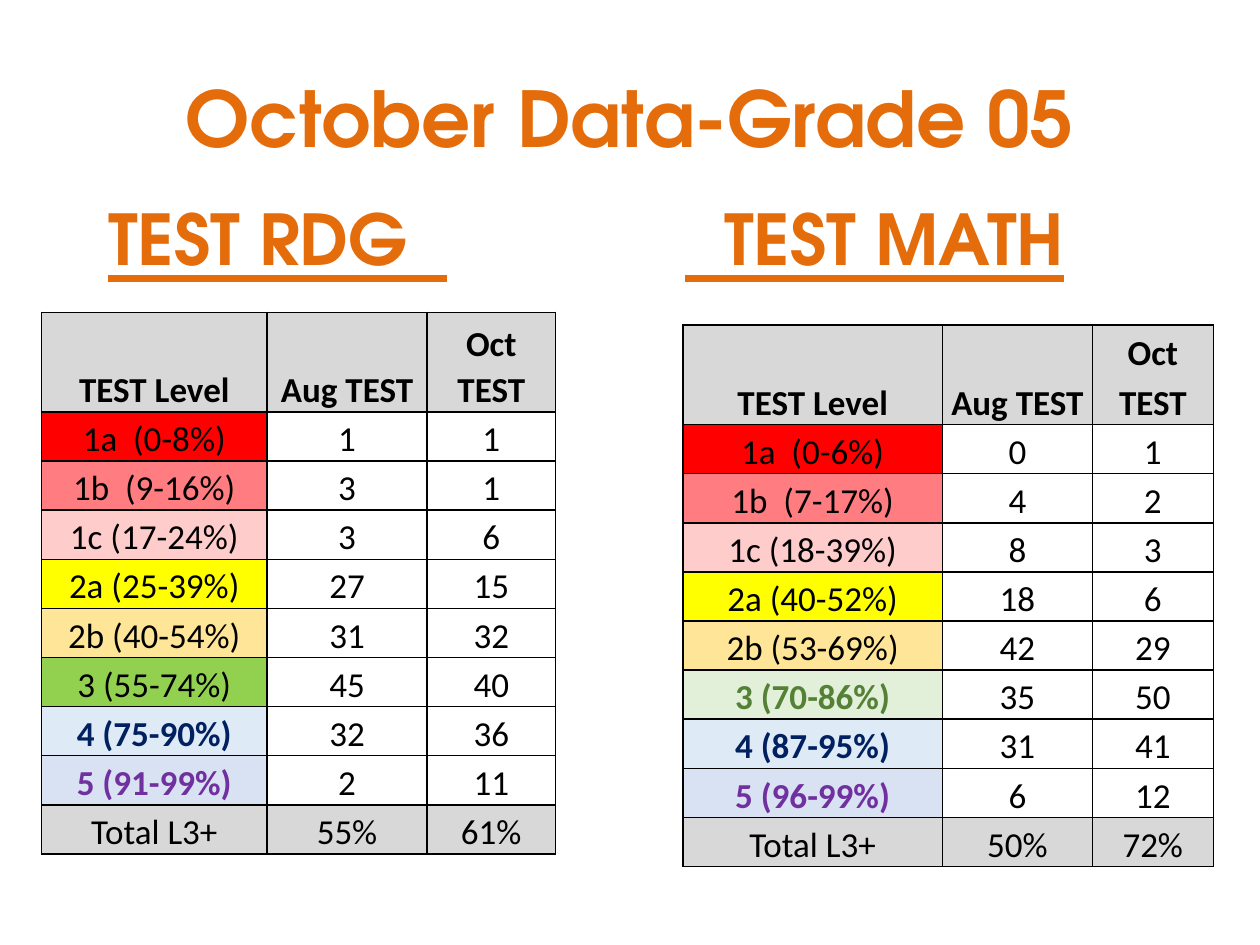
from lxml import etree
from pptx import Presentation
from pptx.dml.color import RGBColor
from pptx.enum import text as en
from pptx.oxml import ns
from pptx.util import Inches, Pt

HEAD = "TeX Gyre Adventor"
ORANGE, BLACK, GREY, WHITE = "E46C0A", "000000", "D8D8D8", "FFFFFF"
NAVY, PURPLE, GREEN = "002060", "7030A0", "548135"
FILLS = ["FF0000", "FF7C80", "FFCCCC", "FFFF00", "FFE598"]
TOPS = ["DEEAF6", "D9E2F3"]

LABELS = ("TEST Level", "Aug TEST", "Oct TEST")
READING = [
    LABELS,
    ("1a  (0-8%)", "1", "1"),
    ("1b  (9-16%)", "3", "1"),
    ("1c (17-24%)", "3", "6"),
    ("2a (25-39%)", "27", "15"),
    ("2b (40-54%)", "31", "32"),
    ("3 (55-74%)", "45", "40"),
    ("4 (75-90%)", "32", "36"),
    ("5 (91-99%)", "2", "11"),
    ("Total L3+", "55%", "61%"),
]
MATH = [
    LABELS,
    ("1a  (0-6%)", "0", "1"),
    ("1b  (7-17%)", "4", "2"),
    ("1c (18-39%)", "8", "3"),
    ("2a (40-52%)", "18", "6"),
    ("2b (53-69%)", "42", "29"),
    ("3 (70-86%)", "35", "50"),
    ("4 (87-95%)", "31", "41"),
    ("5 (96-99%)", "6", "12"),
    ("Total L3+", "50%", "72%"),
]


def color(code):
    return RGBColor.from_string(code)


def style(run, size, face, code, bold):
    font = run.font
    font.size, font.name, font.bold = Pt(size), face, bold
    font.color.rgb = color(code)


def frame(slide, box):
    area = slide.shapes.add_textbox(*map(Inches, box)).text_frame
    area.word_wrap = True
    return area


def title(slide, box):
    area = frame(slide, box)
    area.vertical_anchor = en.MSO_ANCHOR.MIDDLE
    area.text = "October Data-Grade 05"
    para = area.paragraphs[0]
    para.alignment = en.PP_ALIGN.CENTER
    style(para.runs[0], 44, HEAD, ORANGE, True)


def headings(slide, box):
    area = frame(slide, box)
    area.margin_left = Inches(0.31)
    para = area.paragraphs[0]
    tabs = etree.SubElement(para._p.get_or_add_pPr(), ns.qn("a:tabLst"))
    etree.SubElement(tabs, ns.qn("a:tab"), pos=str(Inches(4.58)), algn="l")
    for words, under in [("TEST RDG  ", True), ("\t", False), ("  TEST MATH", True)]:
        run = para.add_run()
        run.text = words
        style(run, 40, HEAD, ORANGE, True)
        run.font.underline = under


def border(cell):
    props = cell._tc.get_or_add_tcPr()
    for side in "LRTB":
        line = etree.SubElement(props, ns.qn("a:ln" + side), w=str(Pt(1)))
        fill = etree.SubElement(line, ns.qn("a:solidFill"))
        etree.SubElement(fill, ns.qn("a:srgbClr"), val=BLACK)


def fill_cell(cell, words, back, ink, bold, space):
    border(cell)
    cell.fill.solid()
    cell.fill.fore_color.rgb = color(back)
    cell.vertical_anchor = en.MSO_ANCHOR.BOTTOM
    cell.margin_left = cell.margin_right = Inches(0.07)
    cell.margin_top = cell.margin_bottom = 0
    cell.text = words
    para = cell.text_frame.paragraphs[0]
    para.alignment = en.PP_ALIGN.CENTER
    para.line_spacing = space
    style(para.runs[0], 20, "Calibri", ink, bold)


def scores(slide, box, rows, widths, space, third, inks):
    grid = slide.shapes.add_table(len(rows), len(widths), *map(Inches, box)).table
    for col, width in zip(grid.columns, widths):
        col.width = Inches(width)
    fills = [GREY, *FILLS, third, *TOPS, GREY]
    for r, row in enumerate(rows):
        grid.rows[r].height = Inches(0.39 if r else 0.79)
        ends = r in (0, len(rows) - 1)
        for c, words in enumerate(row):
            back = fills[r] if ends or c == 0 else WHITE
            ink = inks.get(r, BLACK) if c == 0 else BLACK
            bold = r == 0 or ink != BLACK
            fill_cell(grid.cell(r, c), words, back, ink, bold, space)


def main():
    deck = Presentation()
    deck.slide_width, deck.slide_height = Inches(10), Inches(7.5)
    slide = deck.slides.add_slide(deck.slide_layouts[6])
    title(slide, (0.5, 0.3, 9, 1.25))
    headings(slide, (0.55, 1.5, 9, 4.95))
    inks = {7: NAVY, 8: PURPLE}
    scores(slide, (0.33, 2.48, 4.08, 4.27), READING,
           (1.79, 1.27, 1.02), 1.07, "92D050", inks)
    scores(slide, (5.42, 2.58, 4.21, 4.22), MATH,
           (2.06, 1.19, 0.96), 1.15, "E2EFD9", {6: GREEN, **inks})
    deck.save("out.pptx")


if __name__ == "__main__":
    main()
